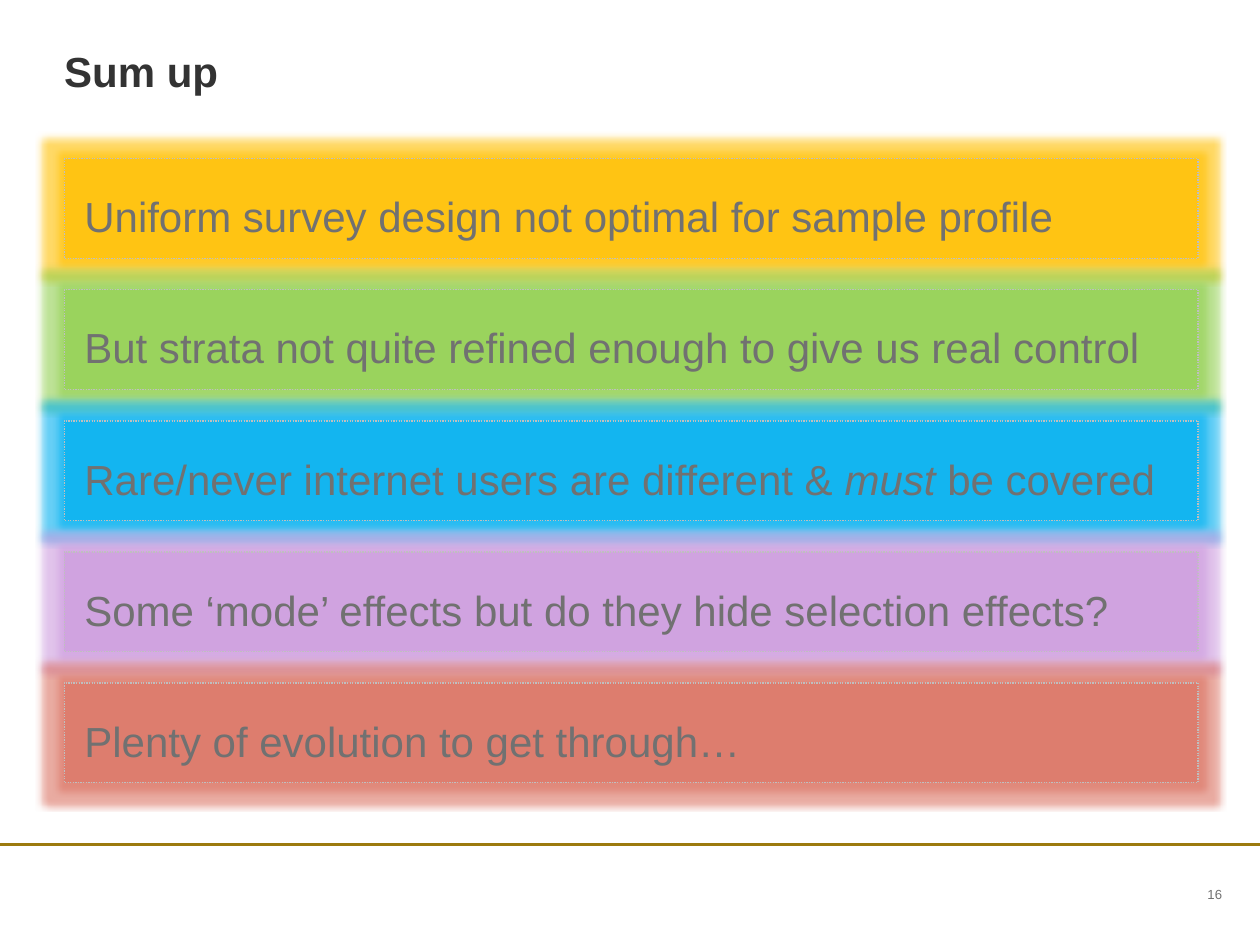
from lxml import etree
from pptx import Presentation
from pptx.dml.color import RGBColor
from pptx.enum.dml import MSO_LINE
from pptx.enum.shapes import MSO_CONNECTOR, MSO_SHAPE
from pptx.enum.text import MSO_ANCHOR, MSO_AUTO_SIZE, PP_ALIGN
from pptx.oxml.ns import qn
from pptx.util import Inches, Pt

TITLE = "Sum up"
PAGE_NUMBER = "16"
CONCLUSIONS = [
    ("FFC000", [("Uniform survey design not optimal for sample profile", False)]),
    ("92D050", [("But strata not quite refined enough to give us real control", False)]),
    ("00B0F0", [("Rare/never internet users are different & ", False),
                ("must", True), (" be covered", False)]),
    ("CD9CDF", [("Some ‘mode’ effects but do they hide selection effects?", False)]),
    ("DB7363", [("Plenty of evolution to get through…", False)]),
]
GREY, DARK, BORDER, GOLD = "717171", "333333", "BFBFBF", "9C7A0E"
LEFT, WIDTH = 0.51, 9
FIRST_TOP, BAR_HEIGHT, ROW_PITCH = 1.26, 0.79, 1.04
BAR_OPACITY, GLOW_OPACITY, GLOW_RADIUS = 50, 60, Pt(8)


def color(value):
    """Turn a hex string into a colour."""
    return RGBColor.from_string(value)


def add_alpha(color_element, percent):
    """Give a colour element an opacity."""
    etree.SubElement(color_element, qn("a:alpha"), val=str(percent * 1000))


def write(shape, runs, inset=0, line_spacing=None, align=PP_ALIGN.LEFT,
          anchor=MSO_ANCHOR.TOP, **font_format):
    """Fill a shape with one paragraph of formatted runs."""
    frame = shape.text_frame
    frame_format = {"word_wrap": True, "vertical_anchor": anchor}
    for side in ("left", "right", "top", "bottom"):
        frame_format[f"margin_{side}"] = Inches(inset)
    for name, value in frame_format.items():
        setattr(frame, name, value)
    paragraph = frame.paragraphs[0]
    paragraph.alignment = align
    paragraph.line_spacing = line_spacing
    text_color = font_format.pop("text_color", GREY)
    for text, italic in runs:
        run = paragraph.add_run()
        run.text = text
        for name, value in {"name": "Arial", "italic": italic, **font_format}.items():
            setattr(run.font, name, value)
        run.font.color.rgb = color(text_color)


def add_text(slide, box, text, **text_format):
    """Add a text box at a box given in inches."""
    shape = slide.shapes.add_textbox(*map(Inches, box))
    write(shape, [(text, False)], **text_format)


def add_footer_line(slide, top):
    """Draw the rule across the foot of the slide."""
    line = slide.shapes.add_connector(
        MSO_CONNECTOR.STRAIGHT, 0, Inches(top), Inches(10), Inches(top))
    line.line.color.rgb = color(GOLD)
    line.line.width = Pt(1.5)
    etree.SubElement(line._element.spPr, qn("a:effectLst"))


def add_bar(slide, row, fill_color, runs):
    """Add one glowing, see-through conclusion bar."""
    top = FIRST_TOP + row * ROW_PITCH
    bar = slide.shapes.add_shape(
        MSO_SHAPE.RECTANGLE, *map(Inches, (LEFT, top, WIDTH, BAR_HEIGHT)))
    bar.fill.solid()
    bar.fill.fore_color.rgb = color(fill_color)
    bar.line.color.rgb = color(BORDER)
    bar.line.width = Pt(0.75)
    bar.line.dash_style = MSO_LINE.ROUND_DOT
    bar.shadow.inherit = False
    properties = bar._element.spPr
    add_alpha(properties.find(qn("a:solidFill"))[0], BAR_OPACITY)
    glow = etree.SubElement(properties.find(qn("a:effectLst")), qn("a:glow"),
                            rad=str(GLOW_RADIUS))
    add_alpha(etree.SubElement(glow, qn("a:srgbClr"), val=fill_color), GLOW_OPACITY)
    write(bar, runs, inset=0.16, line_spacing=1.3, anchor=MSO_ANCHOR.MIDDLE, size=Pt(24))
    bar.text_frame.auto_size = MSO_AUTO_SIZE.SHAPE_TO_FIT_TEXT


def main():
    """Build the slide and save it."""
    presentation = Presentation()
    presentation.slide_width, presentation.slide_height = Inches(10), Inches(7.5)
    slide = presentation.slides.add_slide(presentation.slide_layouts[6])
    add_footer_line(slide, 6.7)
    add_text(slide, (8.9, 6.99, 0.8, 0.22), PAGE_NUMBER, size=Pt(7.5),
             align=PP_ALIGN.RIGHT, anchor=MSO_ANCHOR.MIDDLE)
    add_text(slide, (LEFT, 0.36, WIDTH, 0.8), TITLE, size=Pt(24), bold=True,
             text_color=DARK)
    for row, (fill_color, runs) in enumerate(CONCLUSIONS):
        add_bar(slide, row, fill_color, runs)
    presentation.save("out.pptx")


if __name__ == "__main__":
    main()
